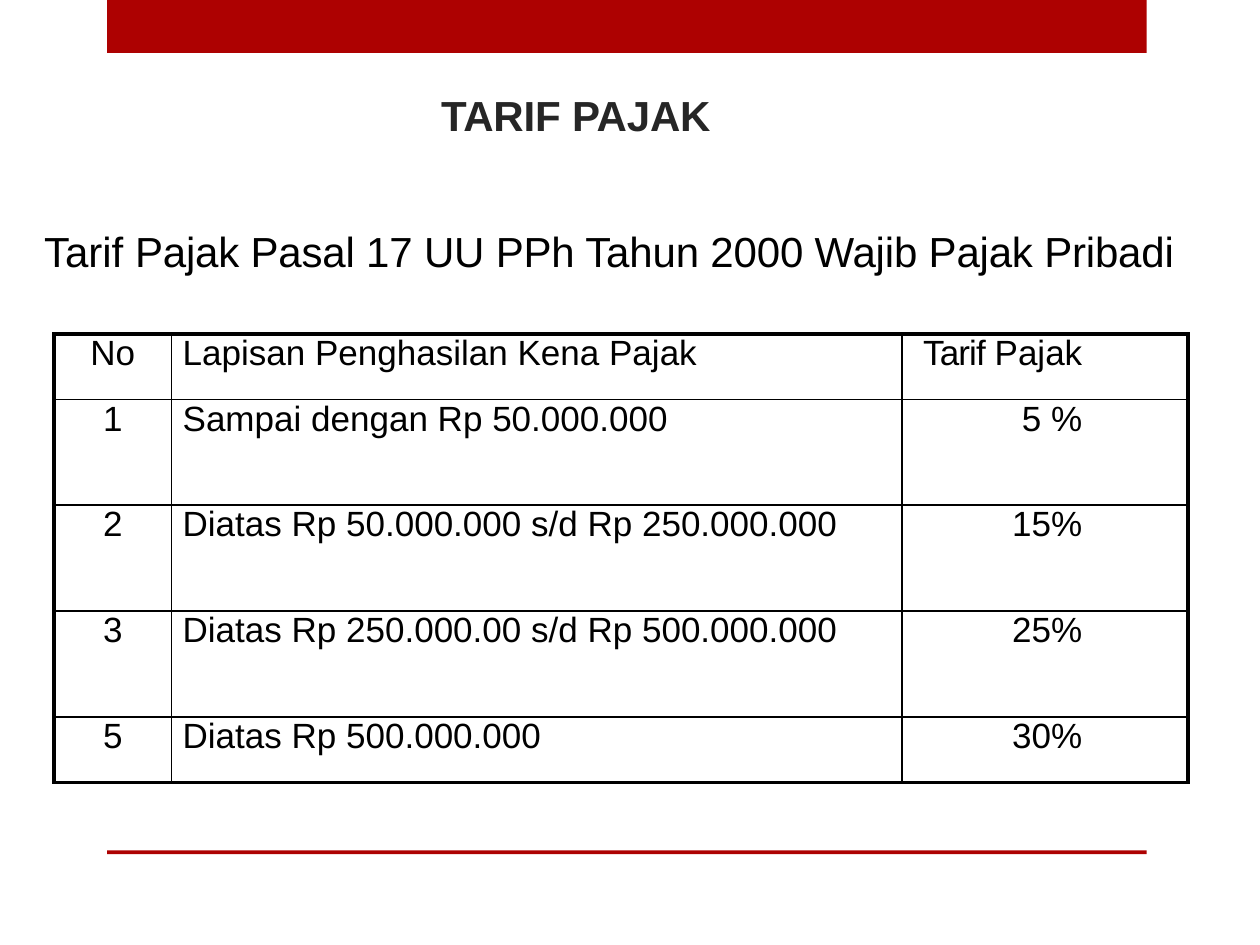
from lxml import etree
from pptx import Presentation
from pptx import util as u
from pptx.dml.color import RGBColor
from pptx.enum import shapes, text
from pptx.oxml.ns import qn


def tint(part, code):
    part.solid()
    part.fore_color.rgb = RGBColor.from_string(code)


def write(para, parts, size, color="000000", bold=False):
    for words, gap in parts:
        run = para.add_run()
        run.text = words
        run.font.name = "Arial"
        run.font.size = u.Pt(size)
        run.font.bold = bold
        tint(run.font.fill, color)
        run.font._element.set("spc", str(gap))


deck = Presentation()
deck.slide_width = u.Inches(10)
deck.slide_height = u.Inches(7.5)
slide = deck.slides.add_slide(deck.slide_layouts[5])
tree = slide.shapes

for top, high in [(0, 0.42), (6.75, 0.03)]:
    bar = tree.add_shape(shapes.MSO_SHAPE.RECTANGLE, u.Inches(0.85),
                         u.Inches(top), u.Inches(8.25), u.Inches(high))
    bar.shadow.inherit = False
    tint(bar.fill, "AD0101")
    bar.line.fill.background()

title = tree.title
title.left, title.top = u.Inches(1.33), u.Inches(0.5)
title.width, title.height = u.Inches(7.42), u.Inches(0.61)
frame = title.text_frame
frame.auto_size = text.MSO_AUTO_SIZE.NONE
frame.vertical_anchor = text.MSO_ANCHOR.BOTTOM
frame.margin_left, frame.margin_top = u.Inches(2.17), u.Inches(0.2)
frame.margin_right = frame.margin_bottom = 0
para = frame.paragraphs[0]
para.alignment = text.PP_ALIGN.LEFT
para.space_before = u.Pt(0)
write(para, [("TARIF PAJAK", -10)], 24, "262626", True)

box = tree.add_textbox(u.Inches(0.34), u.Inches(1.79), u.Inches(9.17), u.Inches(0.41))
frame = box.text_frame
frame.word_wrap = True
frame.margin_left = u.Inches(0.01)
frame.margin_top = frame.margin_right = frame.margin_bottom = 0
write(frame.paragraphs[0],
      [("Tarif ", 0), ("Pajak Pasal 17 UU PPh Tahun 2000 Wajib Pajak Pribadi", -10)], 24)

rows = [
    ("No", "Lapisan Penghasilan Kena Pajak", "Tarif Pajak"),
    ("1", "Sampai dengan Rp 50.000.000", "5 %"),
    ("2", "Diatas Rp 50.000.000 s/d Rp 250.000.000", "15%"),
    ("3", "Diatas Rp 250.000.00 s/d Rp 500.000.000", "25%"),
    ("5", "Diatas Rp 500.000.000", "30%"),
]
wide = [0.93, 5.8, 2.27]
tall = [0.52, 0.84, 0.84, 0.84, 0.52]
align = [text.PP_ALIGN.CENTER, text.PP_ALIGN.LEFT, text.PP_ALIGN.RIGHT]
left = [0, 0.09, 0]
right = [0, 0, 0.84]

table = tree.add_table(5, 3, u.Inches(0.43), u.Inches(2.65),
                       u.Inches(sum(wide)), u.Inches(sum(tall))).table
table.first_row = table.horz_banding = False
for col, size in zip(table.columns, wide):
    col.width = u.Inches(size)
for row, size in zip(table.rows, tall):
    row.height = u.Inches(size)

for r, row in enumerate(rows):
    for c, words in enumerate(row):
        cell = table.cell(r, c)
        cell.margin_left, cell.margin_right = u.Inches(left[c]), u.Inches(right[c])
        cell.margin_top = cell.margin_bottom = 0
        para = cell.text_frame.paragraphs[0]
        para.alignment = align[c]
        parts = [("Tarif ", -50), ("Pajak", 0)] if words == "Tarif Pajak" else [(words, 0)]
        write(para, parts, 20)
        prop = cell._tc.get_or_add_tcPr()
        edges = {"L": c == 0, "R": c == 2, "T": r == 0, "B": r == 4}
        for side, outer in edges.items():
            line = etree.SubElement(prop, qn("a:ln" + side), w=str(u.Pt(2.25 if outer else 1)))
            fill = etree.SubElement(line, qn("a:solidFill"))
            etree.SubElement(fill, qn("a:srgbClr"), val="000000")
        cell.fill.background()

deck.save("out.pptx")
